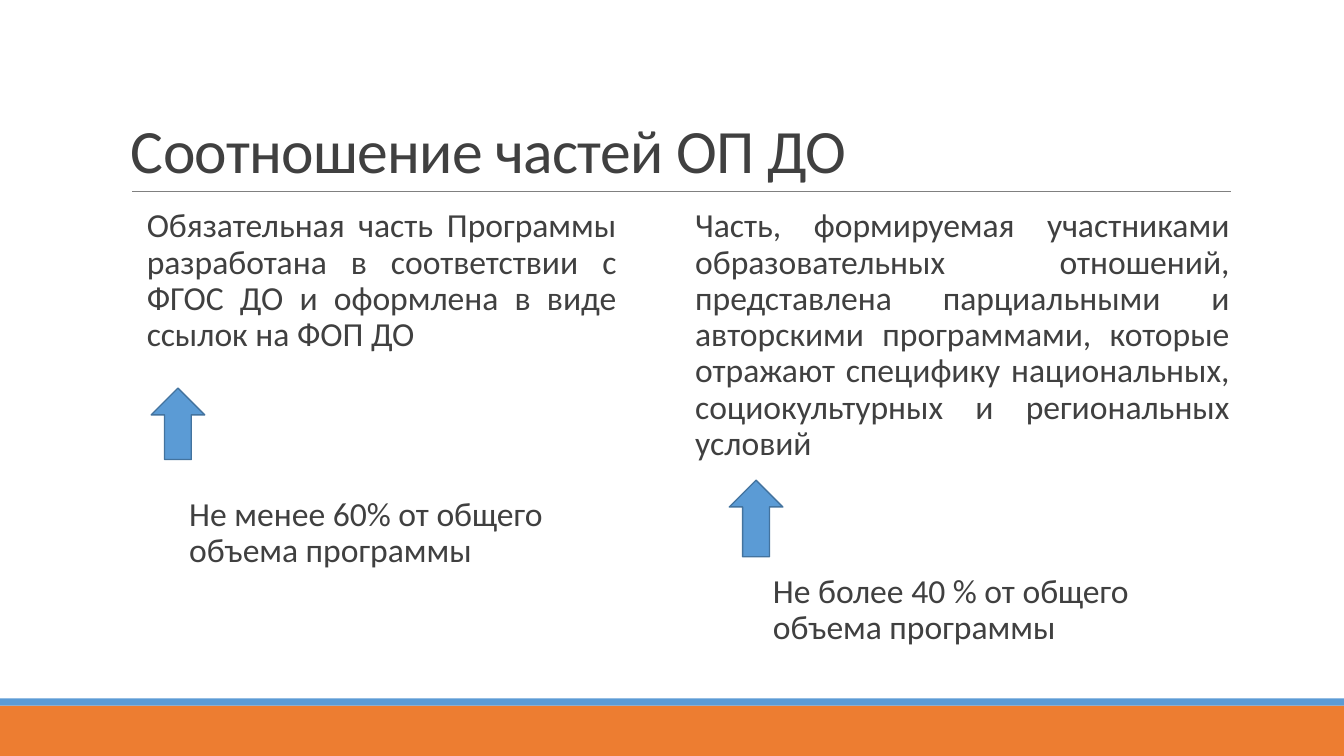
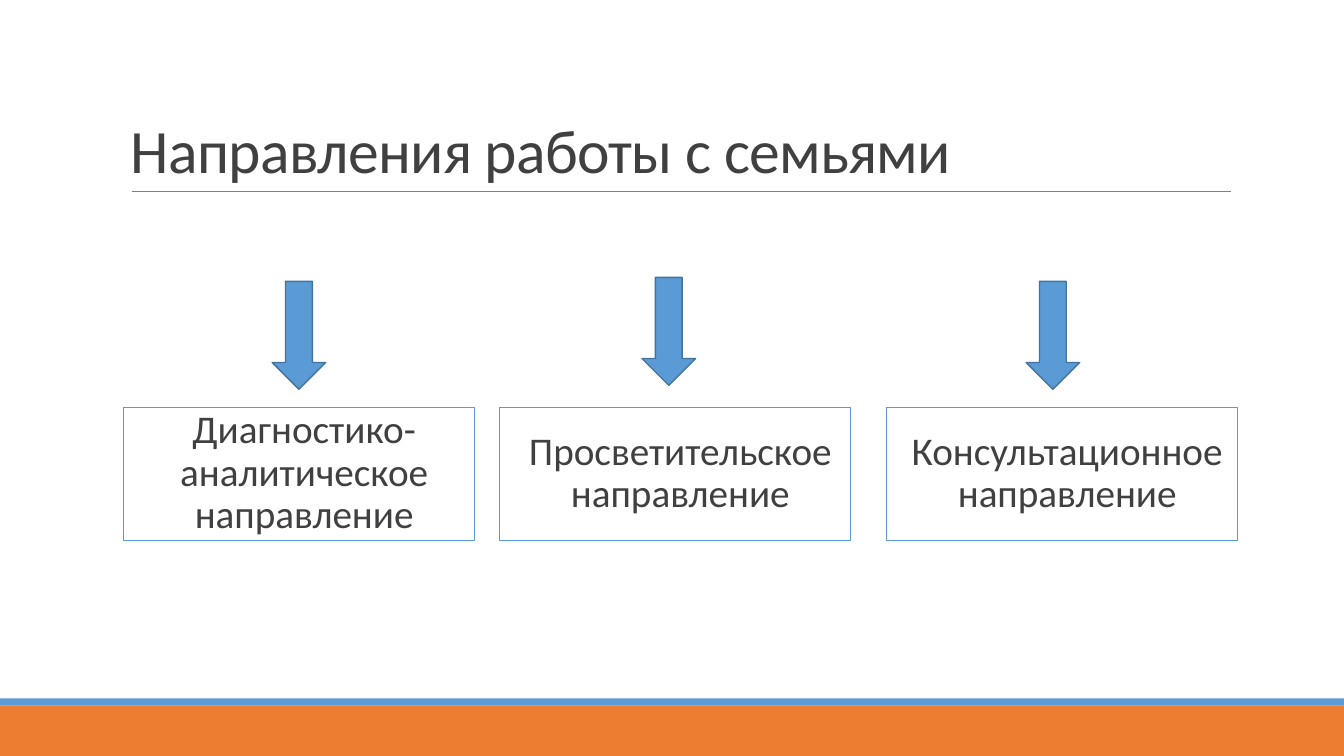
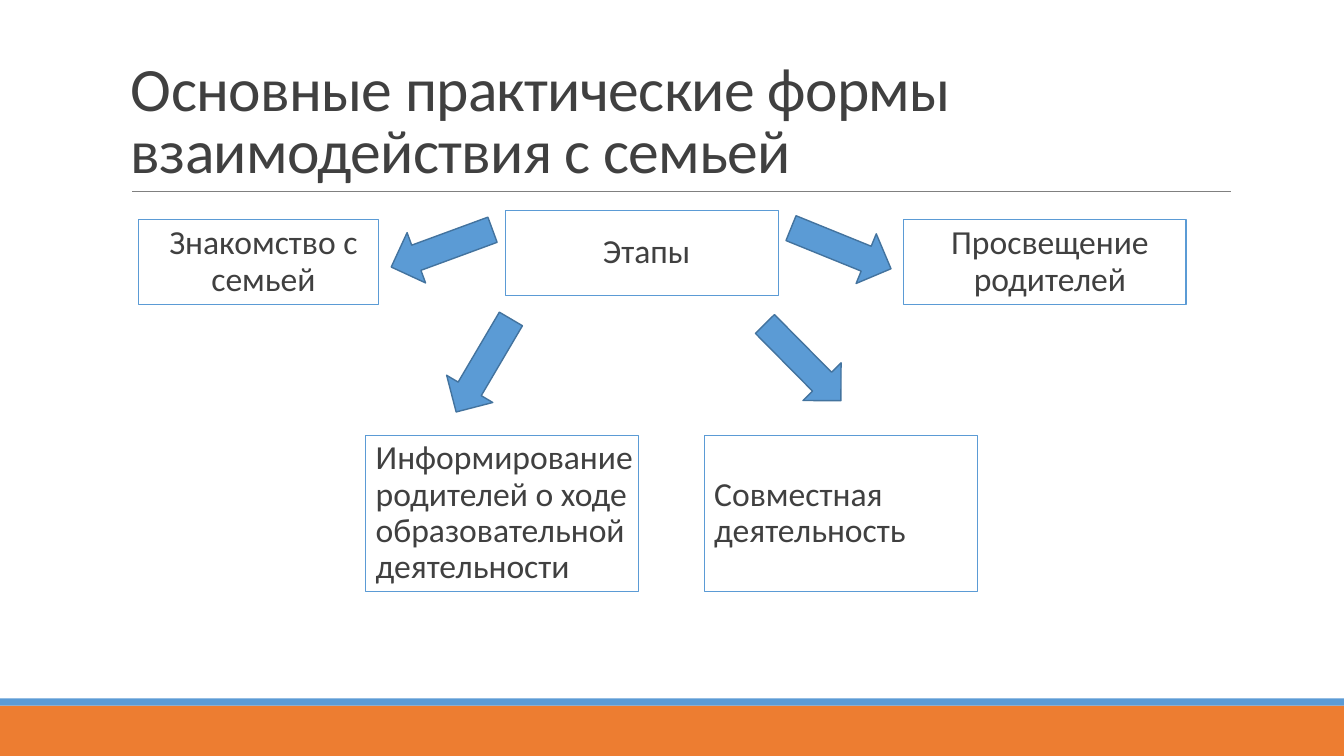
import dataclasses

import lxml.etree
import pptx
import pptx.dml.color
import pptx.enum.shapes
import pptx.enum.text
import pptx.oxml.ns
import pptx.util

Cm = pptx.util.Cm
Pt = pptx.util.Pt
Color = pptx.dml.color.RGBColor
Shape = pptx.enum.shapes.MSO_SHAPE
Align = pptx.enum.text.PP_ALIGN
Anchor = pptx.enum.text.MSO_ANCHOR


@dataclasses.dataclass(frozen=True)
class Theme:
    font: str = "Calibri"
    text: Color = Color(0x40, 0x40, 0x40)
    blue: Color = Color(0x5B, 0x9B, 0xD5)
    dark_blue: Color = Color(0x43, 0x73, 0x9E)
    orange: Color = Color(0xED, 0x7D, 0x31)
    rule: Color = Color(0x80, 0x80, 0x80)
    title_size: int = 44
    large_size: int = 28
    body_size: int = 24


THEME = Theme()
PAGE_WIDTH, PAGE_HEIGHT = 33.87, 19.05
ARROW_WIDTH = 1.35


def write(shape, text, size, align=Align.LEFT, anchor=Anchor.TOP, spacing=0.9, right=0):
    frame = shape.text_frame
    frame.word_wrap = True
    frame.vertical_anchor = anchor
    frame.margin_left, frame.margin_right = Cm(0.25), Cm(right)
    frame.margin_top = frame.margin_bottom = Cm(0.13)
    frame.text = text
    para = frame.paragraphs[0]
    para.alignment = align
    para.line_spacing = spacing
    span = para.runs[0]
    span.font.name = THEME.font
    span.font.size = Pt(size)
    span.font.color.rgb = THEME.text
    return span


def add_text(page, text, left, top, width, height, align=Align.LEFT):
    box = page.shapes.add_textbox(Cm(left), Cm(top), Cm(width), Cm(height))
    write(box, text, THEME.body_size, align)


def add_figure(page, kind, left, top, width, height, fill=None, line=None, line_width=0.75):
    figure = page.shapes.add_shape(kind, Cm(left), Cm(top), Cm(width), Cm(height))
    figure.shadow.inherit = False
    if fill is None:
        figure.fill.background()
    else:
        figure.fill.solid()
        figure.fill.fore_color.rgb = fill
    if line is None:
        figure.line.fill.background()
    else:
        figure.line.color.rgb = line
        figure.line.width = Pt(line_width)
    return figure


def add_box(page, text, left, top, width, height, size=THEME.body_size, align=Align.CENTER):
    box = add_figure(page, Shape.RECTANGLE, left, top, width, height, line=THEME.blue)
    write(box, text, size, align, Anchor.MIDDLE)


def add_arrow(page, left, top, length=2.72, angle=0, kind=Shape.DOWN_ARROW):
    arrow = add_figure(page, kind, left, top, ARROW_WIDTH, length,
                       THEME.blue, THEME.dark_blue, 1)
    arrow.rotation = angle


def add_title(page, text):
    box = page.shapes.add_textbox(Cm(3.05), Cm(0.79), Cm(27.94), Cm(4.04))
    span = write(box, text, THEME.title_size, anchor=Anchor.BOTTOM, spacing=0.85, right=0.25)
    span._r.get_or_add_rPr().set("spc", "-50")


def add_rule(page):
    rule = page.shapes.add_connector(
        pptx.enum.shapes.MSO_CONNECTOR.STRAIGHT, Cm(3.33), Cm(4.83), Cm(31.01), Cm(4.83))
    rule.line.color.rgb = THEME.rule
    rule.line.width = Pt(0.5)
    lxml.etree.SubElement(rule._element.spPr, pptx.oxml.ns.qn("a:effectLst"))


def add_page(deck, title):
    """Add a slide with the shared bands, rule and title."""
    page = deck.slides.add_slide(deck.slide_layouts[6])
    for top, height, color in ((17.78, 1.27, THEME.orange), (17.6, 0.18, THEME.blue)):
        add_figure(page, Shape.RECTANGLE, 0, top, PAGE_WIDTH, height, color)
    add_rule(page)
    add_title(page, title)
    return page


def add_proportions(deck):
    page = add_page(deck, "Соотношение частей ОП ДО")
    add_text(page, "Обязательная часть Программы разработана в соответствии с ФГОС ДО "
             "и оформлена в виде ссылок на ФОП ДО",
             3.45, 5.13, 12.09, 4.65, Align.JUSTIFY)
    add_text(page, "Часть, формируемая участниками образовательных отношений, представлена "
             "парциальными и авторскими программами, которые отражают специфику "
             "национальных, социокультурных и региональных условий",
             17.27, 5.13, 13.72, 6.68, Align.JUSTIFY)
    add_arrow(page, 3.81, 9.78, 1.8, kind=Shape.UP_ARROW)
    add_arrow(page, 18.38, 12.1, 1.93, kind=Shape.UP_ARROW)
    add_text(page, "Не менее 60% от общего объема программы", 4.52, 12.4, 10.59, 2.4)
    add_text(page, "Не более 40 % от общего объема программы", 19.23, 14.35, 10.59, 2.4)


def add_directions(deck):
    page = add_page(deck, "Направления работы с семьями")
    directions = (
        ("Диагностико-аналитическое направление", 3.12, 6.86, 7.09),
        ("Просветительское направление", 12.6, 16.18, 6.99),
        ("Консультационное направление", 22.35, 25.86, 7.09),
    )
    for text, left, arrow_left, arrow_top in directions:
        add_box(page, text, left, 10.26, 8.84, 3.35, THEME.large_size)
        add_arrow(page, arrow_left, arrow_top)


def add_stages(deck):
    page = add_page(deck, "Основные практические формы взаимодействия с семьей")
    add_box(page, "Этапы", 12.73, 5.31, 6.88, 2.13)
    add_box(page, "Знакомство с семьей", 3.48, 5.54, 6.07, 2.13)
    add_box(page, "Просвещение родителей", 22.78, 5.54, 7.11, 2.13)
    lower_boxes = (
        ("Информирование родителей о ходе образовательной деятельности", 9.22),
        ("Совместная деятельность", 17.75),
    )
    for text, left in lower_boxes:
        add_box(page, text, left, 10.97, 6.88, 3.94, align=Align.LEFT)
    arrows = ((10.46, 4.9, 69.8), (11.51, 7.85, 30.5),
              (20.52, 4.9, 292.1), (19.56, 7.77, 315.3))
    for left, top, angle in arrows:
        add_arrow(page, left, top, angle=angle)


def main():
    deck = pptx.Presentation()
    deck.slide_width, deck.slide_height = Cm(PAGE_WIDTH), Cm(PAGE_HEIGHT)
    add_proportions(deck)
    add_directions(deck)
    add_stages(deck)
    deck.save("out.pptx")


if __name__ == "__main__":
    main()
